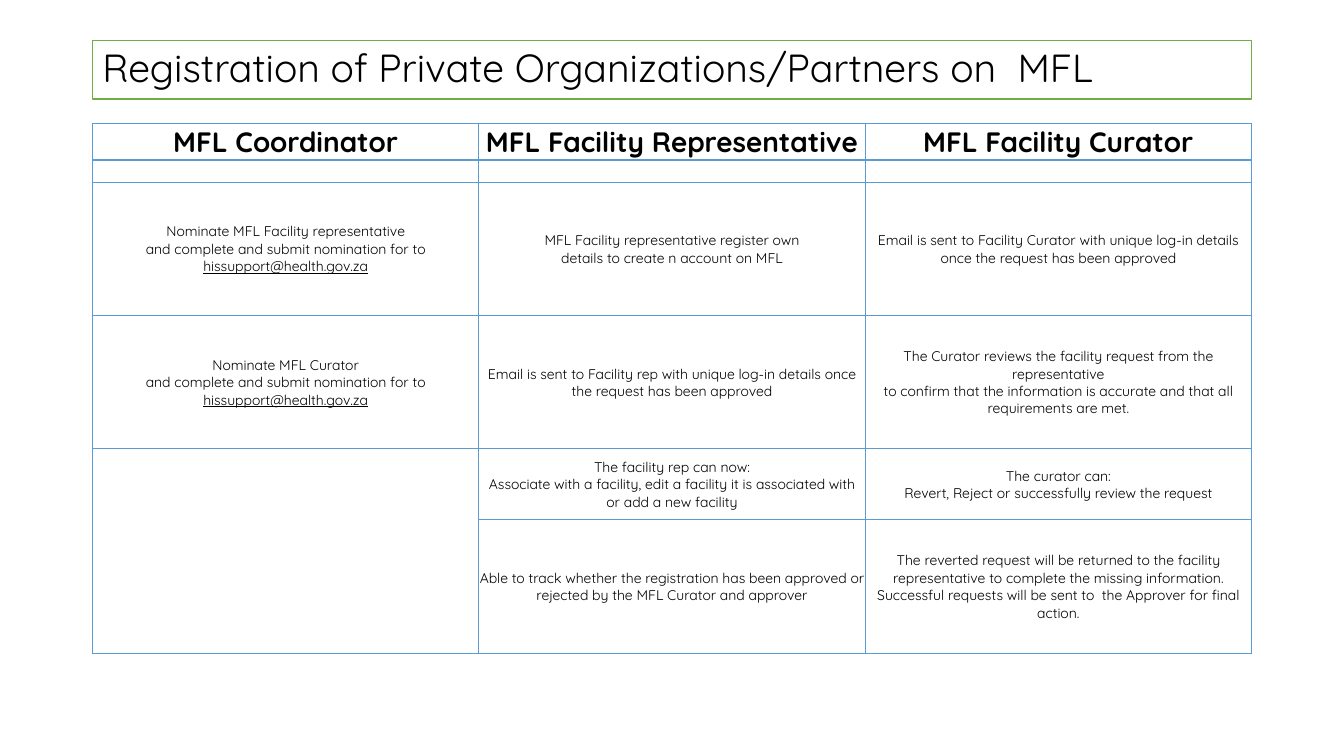
from copy import deepcopy

from pptx import Presentation
from pptx.dml.color import RGBColor
from pptx.enum.text import MSO_ANCHOR as Anchor, MSO_AUTO_SIZE as AutoSize, PP_ALIGN as Align
from pptx.oxml.xmlchemy import OxmlElement
from pptx.util import Cm, Pt

LEFT, WIDTH = 2.33, 29.21
ROW_HEIGHTS = [0.91, 0.56, 3.36, 3.36, 1.79, 3.36]
HEADINGS = ["MFL Coordinator", "MFL Facility Representative", "MFL Facility Curator"]
EMAIL = "hissupport@health.gov.za"
SUBMIT = f"and complete and submit nomination for to {EMAIL}"
STEPS = [
    ["", "", ""],
    [
        f"Nominate MFL Facility representative\n{SUBMIT}",
        "MFL Facility representative register own\ndetails to create n account on MFL",
        "Email is sent to Facility Curator with unique log-in details once the request "
        "has been approved",
    ],
    [
        f"Nominate MFL Curator\n{SUBMIT}",
        "Email is sent to Facility rep with unique log-in details once the request "
        "has been approved",
        "The Curator reviews the facility request from the representative\n"
        "to confirm that the information is accurate and that all\nrequirements are met.",
    ],
    [
        "",
        "The facility rep can now:\nAssociate with a facility, edit a facility it is "
        "associated with\nor add a new facility",
        "The curator can:\nRevert, Reject or successfully review the request",
    ],
    [
        "",
        "Able to track whether the registration has been approved or rejected by the "
        "MFL Curator and approver",
        "The reverted request will be returned to the facility representative to complete "
        "the missing information.\n"
        "Successful requests will be sent to  the Approver for final action.",
    ],
]


def color(value):
    return RGBColor.from_string(value)


def apply(target, values):
    for name, value in values.items():
        setattr(target, name, value)


class ProcessSlide:
    font_name = "Quicksand"
    text_color = "000000"
    title_line = "70AD47"
    grid_line = "5B9BD5"

    def __init__(self, presentation):
        self.slide = presentation.slides.add_slide(presentation.slide_layouts[5])

    def add_run(self, paragraph, text, size, **values):
        run = paragraph.add_run()
        run.text = text
        apply(run.font, {"name": self.font_name, "size": Pt(size), "bold": False, **values})
        run.font.color.rgb = color(self.text_color)
        return run

    def title(self, text, top, height):
        shape = self.slide.shapes.title
        apply(shape, {"left": Cm(LEFT), "top": Cm(top), "width": Cm(WIDTH), "height": Cm(height)})
        shape.fill.solid()
        shape.fill.fore_color.rgb = color("FFFFFF")
        shape.line.color.rgb = color(self.title_line)
        shape.line.width = Pt(1)
        apply(shape.text_frame, {
            "word_wrap": True, "auto_size": AutoSize.NONE, "vertical_anchor": Anchor.MIDDLE,
            "margin_left": Cm(0.25), "margin_right": Cm(0.25),
            "margin_top": Cm(0.13), "margin_bottom": Cm(0.13),
        })
        paragraph = shape.text_frame.paragraphs[0]
        apply(paragraph, {"alignment": Align.LEFT, "line_spacing": 0.9})
        self.add_run(paragraph, text, 28)

    def border(self, cell):
        properties = cell._tc.get_or_add_tcPr()
        for side in ("lnL", "lnR", "lnT", "lnB"):
            line = OxmlElement(f"a:{side}")
            line.set("w", str(Pt(1)))
            fill = OxmlElement("a:solidFill")
            tint = OxmlElement("a:srgbClr")
            tint.set("val", self.grid_line)
            fill.append(tint)
            line.append(fill)
            properties.append(line)

    def write_cell(self, cell, text, size, bold):
        """Write centred text with line breaks, underlining the e-mail address."""
        paragraph = cell.text_frame.paragraphs[0]
        paragraph.alignment = Align.CENTER
        if not text:
            end = OxmlElement("a:endParaRPr")
            end.set("sz", str(size * 100))
            paragraph._p.append(end)
            return
        for index, line in enumerate(text.split("\n")):
            if index:
                paragraph.add_line_break()
                paragraph._p[-1].append(deepcopy(run._r.rPr))
            before, address, _ = line.partition(EMAIL)
            run = self.add_run(paragraph, before, size, bold=bold)
            if address:
                self.add_run(paragraph, address, size, underline=True)

    def table(self, rows, top):
        frame = self.slide.shapes.add_table(
            len(rows), len(HEADINGS), Cm(LEFT), Cm(top), Cm(WIDTH), Cm(sum(ROW_HEIGHTS)))
        table = frame.table
        apply(table, {"first_row": False, "horz_banding": False})
        for column in table.columns:
            column.width = Cm(WIDTH / len(HEADINGS))
        for index, (row, height, texts) in enumerate(zip(table.rows, ROW_HEIGHTS, rows)):
            row.height = Cm(height)
            is_heading = index == 0
            for cell, text in zip(row.cells, texts):
                apply(cell, {
                    "vertical_anchor": Anchor.MIDDLE, "margin_left": Cm(0.02),
                    "margin_right": Cm(0.02), "margin_top": Cm(0.02), "margin_bottom": 0,
                })
                self.border(cell)
                cell.fill.background()
                self.write_cell(cell, text, 20 if is_heading else 10, is_heading)
        table.cell(4, 0).merge(table.cell(5, 0))


def main():
    presentation = Presentation()
    apply(presentation, {"slide_width": Cm(33.87), "slide_height": Cm(19.05)})
    process = ProcessSlide(presentation)
    process.title("Registration of Private Organizations/Partners on  MFL", 1.02, 1.48)
    process.table([HEADINGS, *STEPS], 3.12)
    presentation.save("out.pptx")


if __name__ == "__main__":
    main()
